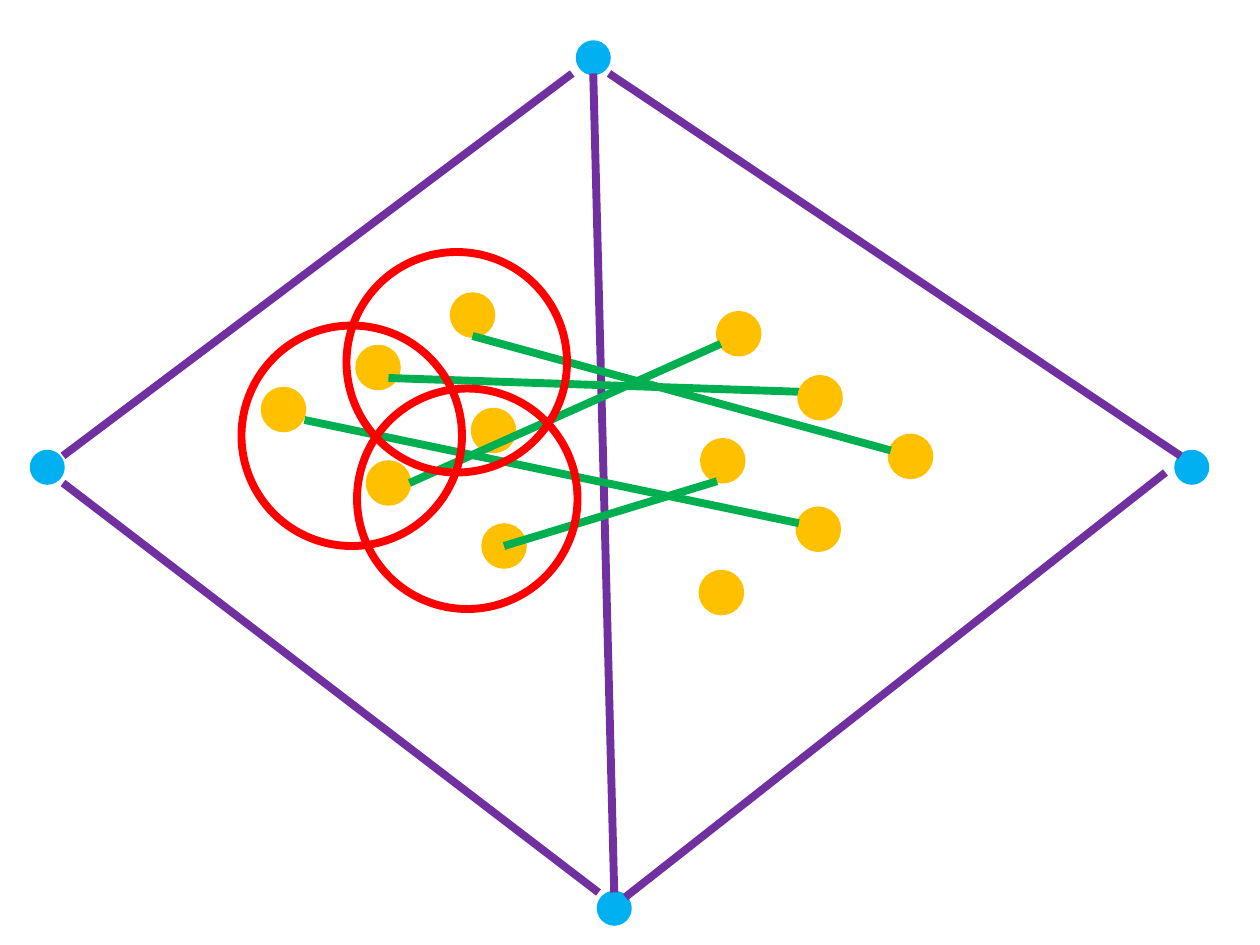
from dataclasses import dataclass

from lxml import etree
from pptx import Presentation
from pptx import util as u
from pptx.dml.color import RGBColor
from pptx.enum import shapes
from pptx.oxml.ns import qn


@dataclass(frozen=True)
class Theme:
    corner: str = "00B0F0"
    edge: str = "7030A0"
    feature: str = "FFC000"
    match: str = "00B050"
    region: str = "FF0000"
    outline: float = 2
    stroke: float = 4.5


@dataclass(frozen=True)
class Circle:
    left: float
    top: float
    size: float
    color: str
    filled: bool = True
    rotation: float = 0


@dataclass(frozen=True)
class Segment:
    x1: float
    y1: float
    x2: float
    y2: float
    color: str


THEME = Theme()
CORNER_SIZE, FEATURE_SIZE, REGION_SIZE = 18, 24, 126
RIGHT_ROTATION = 62.1

CORNERS = [
    Circle(left, top, CORNER_SIZE, THEME.corner)
    for left, top in [(330, 24), (672, 258), (18, 258), (342, 510)]
]
EDGES = [
    Segment(*ends, THEME.edge)
    for ends in [
        (327, 42, 36, 260.5),
        (348, 42, 674.6, 260.5),
        (36, 276, 342, 510),
        (357.4, 512.6, 666, 270),
        (351, 510, 339, 42),
    ]
]
LEFT_FEATURES = [
    Circle(left, top, FEATURE_SIZE, THEME.feature)
    for left, top in [(204, 198), (258, 168), (270, 234), (150, 222), (210, 264), (276, 300)]
]
RIGHT_FEATURES = [
    Circle(left, top, FEATURE_SIZE, THEME.feature, rotation=RIGHT_ROTATION)
    for left, top in [
        (456.6, 215.3), (508.3, 248.8), (455.6, 290.4),
        (410.1, 178.7), (401, 251.3), (400.2, 326.6),
    ]
]
MATCHES = [
    Segment(*ends, THEME.match)
    for ends in [
        (222, 216, 457.2, 223.9),
        (270, 192, 509, 257.4),
        (174, 240, 456.5, 299),
        (234, 276, 411.8, 196.5),
        (288, 312, 409.7, 275),
    ]
]
REGIONS = [
    Circle(left, top, REGION_SIZE, THEME.region, filled=False)
    for left, top in [(198, 144), (138, 186), (204, 222)]
]


def set_line(line, color: str, width: float) -> None:
    line.color.rgb = RGBColor.from_string(color)
    line.width = u.Pt(width)


def draw_circle(slide, circle: Circle) -> None:
    shape = slide.shapes.add_shape(
        shapes.MSO_SHAPE.OVAL,
        *map(u.Pt, (circle.left, circle.top, circle.size, circle.size)),
    )
    shape.shadow.inherit = False
    shape.rotation = circle.rotation
    if circle.filled:
        shape.fill.solid()
        shape.fill.fore_color.rgb = RGBColor.from_string(circle.color)
    else:
        shape.fill.background()
    set_line(shape.line, circle.color, THEME.outline if circle.filled else THEME.stroke)


def draw_segment(slide, segment: Segment) -> None:
    connector = slide.shapes.add_connector(
        shapes.MSO_CONNECTOR.STRAIGHT,
        *map(u.Pt, (segment.x1, segment.y1, segment.x2, segment.y2)),
    )
    set_line(connector.line, segment.color, THEME.stroke)
    etree.SubElement(connector._element.spPr, qn("a:effectLst"))


def main() -> None:
    presentation = Presentation()
    for name, value in {"slide_width": 720, "slide_height": 540}.items():
        setattr(presentation, name, u.Pt(value))
    slide = presentation.slides.add_slide(presentation.slide_layouts[6])

    layers = (
        CORNERS + EDGES + LEFT_FEATURES + MATCHES[:1]
        + RIGHT_FEATURES + MATCHES[1:] + REGIONS
    )
    for item in layers:
        draw = draw_circle if isinstance(item, Circle) else draw_segment
        draw(slide, item)

    presentation.save("out.pptx")


if __name__ == "__main__":
    main()
